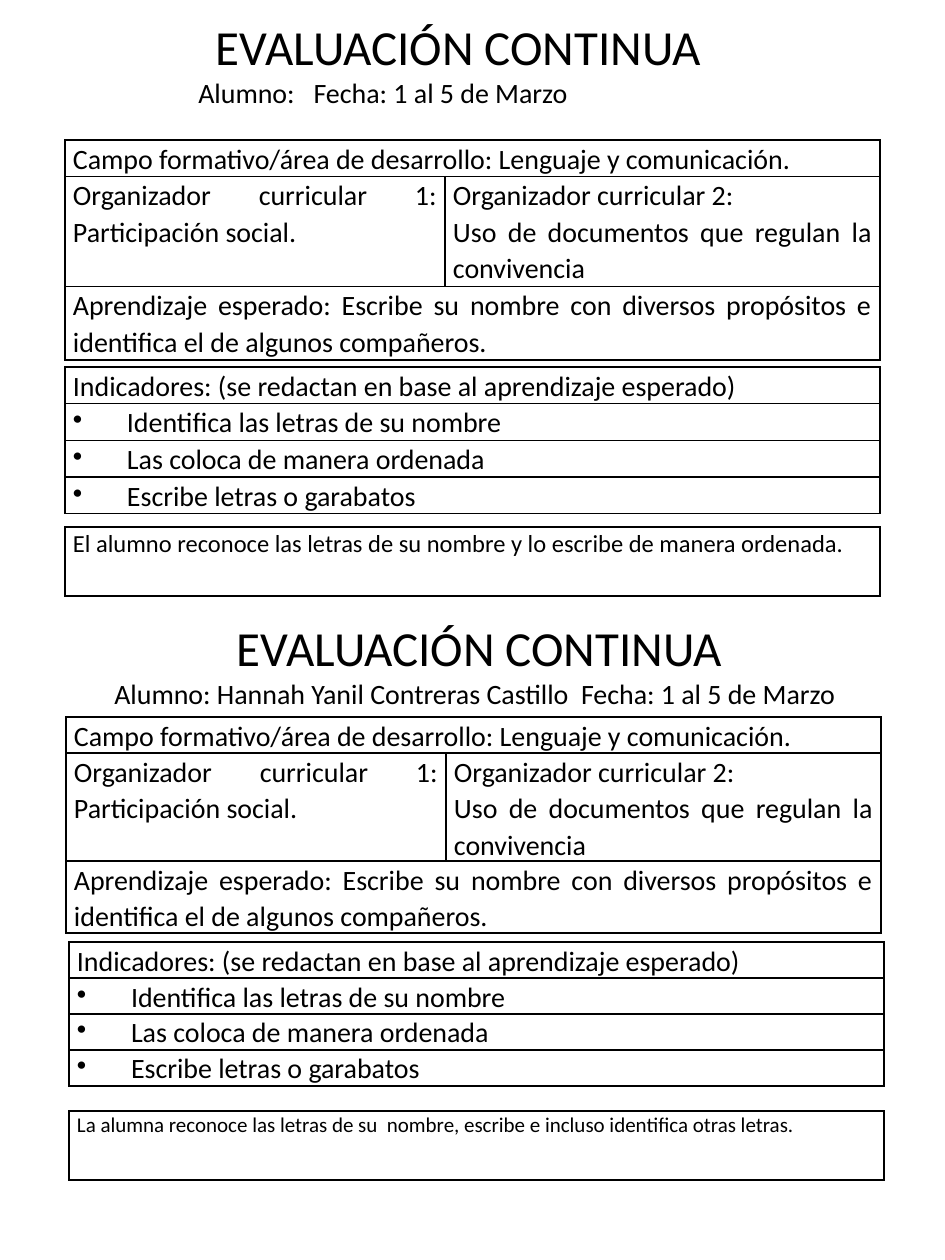
from lxml.etree import SubElement
from pptx import Presentation
from pptx.dml.color import RGBColor
from pptx.enum.text import MSO_ANCHOR as Anchor, PP_ALIGN as Align
from pptx.oxml.ns import qn
from pptx.util import Pt

EMU_PER_PX = 914400 // 126
INK = "000000"
TABLE_WIDTH = 815
FIELD = "Campo formativo/área de desarrollo: Lenguaje y comunicación."
ORGANIZERS = [
    ["Organizador curricular 1: Participación social."],
    ["Organizador curricular 2:", "Uso de documentos que regulan la convivencia"],
]
LEARNING = ("Aprendizaje esperado: Escribe su nombre con diversos propósitos "
            "e identifica el de algunos compañeros.")
INDICATOR_TITLE = "Indicadores: (se redactan en base al aprendizaje esperado)"
INDICATORS = [
    "Identifica las letras de su nombre",
    "Las coloca de manera ordenada",
    "Escribe letras o garabatos",
]
FORMS = [
    {
        "pupil": "Alumno:   Fecha: 1 al 5 de Marzo",
        "remark": "El alumno reconoce las letras de su nombre y lo escribe de manera ordenada.",
        "remark_size": 14,
        "heading": (186, 10, 545),
        "curriculum": (65, 140),
        "indicators": (65, 367),
        "comment": (65, 527),
    },
    {
        "pupil": "Alumno: Hannah Yanil Contreras Castillo  Fecha: 1 al 5 de Marzo",
        "remark": "La alumna reconoce las letras de su  nombre, escribe e incluso identifica otras letras.",
        "remark_size": 12,
        "heading": (102, 611, 755),
        "curriculum": (66, 717),
        "indicators": (69, 942),
        "comment": (69, 1111),
    },
]


def px(length):
    """Turn px into EMU."""
    return length * EMU_PER_PX


def color(value):
    """Turn a hex string into a colour."""
    return RGBColor.from_string(value)


def apply_format(target, values):
    """Set each named attribute on the target."""
    for name, value in values.items():
        setattr(target, name, value)


def write_lines(frame, lines, size, **paragraph_format):
    """Write each line as one paragraph of the text frame."""
    for index, line in enumerate(lines):
        paragraph = frame.add_paragraph() if index else frame.paragraphs[0]
        apply_format(paragraph, paragraph_format)
        run = paragraph.add_run()
        run.text = line
        apply_format(run.font, {"name": "Calibri", "size": Pt(size)})
        run.font.color.rgb = color(INK)


def add_borders(cell):
    """Draw a thin line on all four sides of a cell."""
    properties = cell._tc.get_or_add_tcPr()
    for side in ("a:lnL", "a:lnR", "a:lnT", "a:lnB"):
        line = SubElement(properties, qn(side), w=str(Pt(1)))
        fill = SubElement(line, qn("a:solidFill"))
        SubElement(fill, qn("a:srgbClr"), val=INK)


def add_bullet(paragraph):
    """Give a paragraph a round bullet and a hanging indent."""
    properties = paragraph._p.get_or_add_pPr()
    properties.set("marL", str(px(54)))
    properties.set("indent", str(-px(54)))
    SubElement(properties, qn("a:buChar"), char="•")


def add_grid(slide, box, columns, rows):
    """Place an empty bordered table with the given column and row sizes."""
    left, top = box
    table = slide.shapes.add_table(
        len(rows), len(columns), px(left), px(top), px(sum(columns)), px(sum(rows))
    ).table
    apply_format(table, {"first_row": False, "horz_banding": False})
    for column, width in zip(table.columns, columns):
        column.width = px(width)
    for row, height in zip(table.rows, rows):
        row.height = px(height)
    for cell in table.iter_cells():
        apply_format(cell, {"margin_left": px(8), "margin_right": px(8),
                            "margin_top": 0, "margin_bottom": 0})
        add_borders(cell)
        cell.fill.background()
    return table


def write_cell(cell, lines, size=16):
    """Write justified lines into a table cell."""
    write_lines(cell.text_frame, lines, size, alignment=Align.JUSTIFY, line_spacing=1.07)


def add_curriculum(slide, box):
    """Place the table of field, organizers and expected learning."""
    table = add_grid(slide, box, [380, TABLE_WIDTH - 380], [36, 108, 72])
    for row, text in ((0, FIELD), (2, LEARNING)):
        table.cell(row, 0).merge(table.cell(row, 1))
        write_cell(table.cell(row, 0), [text])
    for column, lines in enumerate(ORGANIZERS):
        write_cell(table.cell(1, column), lines)


def add_indicators(slide, box):
    """Place the table of bulleted indicators."""
    table = add_grid(slide, box, [TABLE_WIDTH], [36] * (len(INDICATORS) + 1))
    write_cell(table.cell(0, 0), [INDICATOR_TITLE])
    for row, text in enumerate(INDICATORS, start=1):
        cell = table.cell(row, 0)
        write_cell(cell, [text])
        add_bullet(cell.text_frame.paragraphs[0])


def add_comment(slide, box, remark, size):
    """Place the one-cell table with the teacher's remark."""
    table = add_grid(slide, box, [TABLE_WIDTH], [69])
    write_cell(table.cell(0, 0), [remark], size)


def add_heading(slide, box, pupil):
    """Place the title and the line with pupil and date."""
    left, top, width = box
    frame = slide.shapes.add_textbox(px(left), px(top), px(width), px(144)).text_frame
    apply_format(frame, {"word_wrap": True, "vertical_anchor": Anchor.TOP})
    write_lines(frame, ["EVALUACIÓN CONTINUA"], 28, alignment=Align.CENTER)
    write_lines_after = frame.add_paragraph()
    run = write_lines_after.add_run()
    run.text = pupil
    apply_format(run.font, {"name": "Calibri", "size": Pt(16)})
    run.font.color.rgb = color(INK)


def add_form(slide, form):
    """Place one whole evaluation form."""
    add_curriculum(slide, form["curriculum"])
    add_indicators(slide, form["indicators"])
    add_comment(slide, form["comment"], form["remark"], form["remark_size"])
    add_heading(slide, form["heading"], form["pupil"])


def main():
    """Build and save the slide."""
    presentation = Presentation()
    apply_format(presentation, {"slide_width": px(945), "slide_height": px(1260)})
    slide = presentation.slides.add_slide(presentation.slide_layouts[6])
    for form in FORMS:
        add_form(slide, form)
    presentation.save("out.pptx")


if __name__ == "__main__":
    main()
